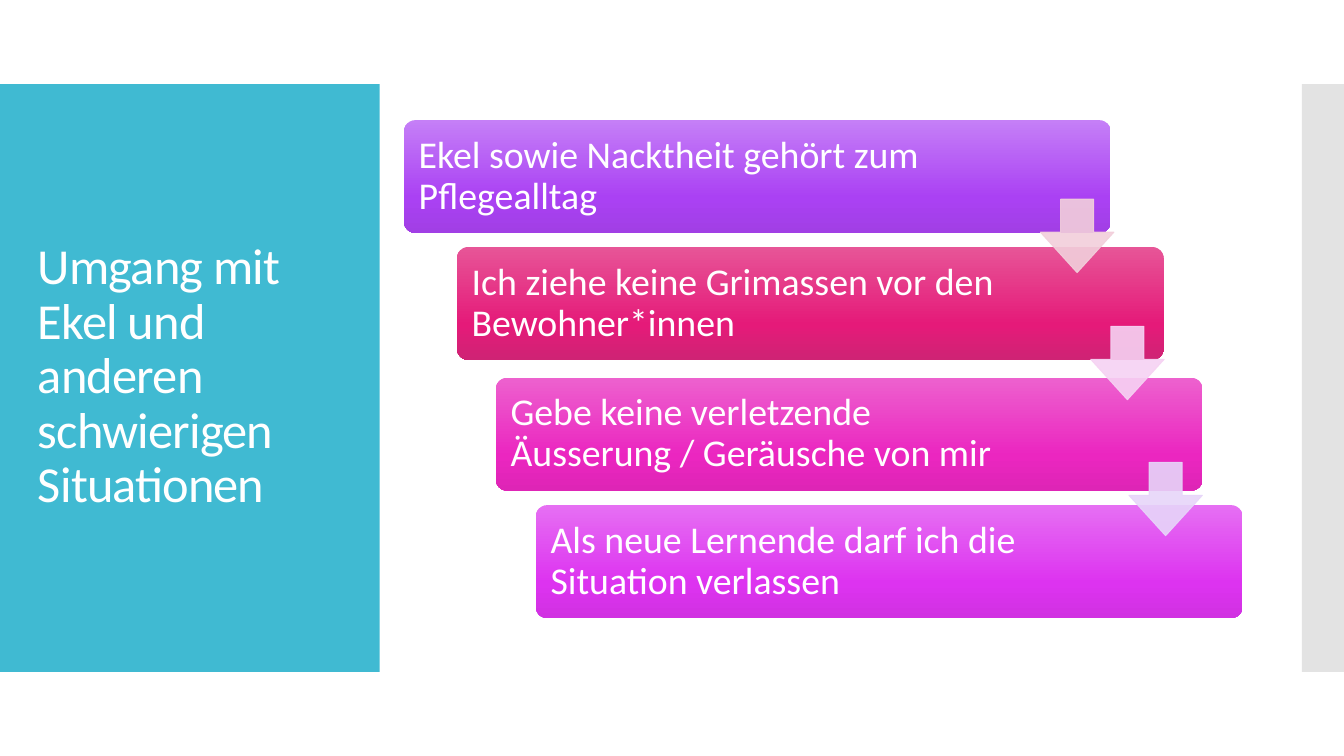
from copy import deepcopy

from lxml import etree
from pptx import Presentation
from pptx.dml.color import RGBColor
from pptx.enum import shapes, text
from pptx.oxml import ns
from pptx.util import Pt

WHITE = RGBColor(0xFF, 0xFF, 0xFF)
TEAL = RGBColor(0x40, 0xBA, 0xD2)
GREY = RGBColor(0xC8, 0xC8, 0xC8)
VIOLET = [RGBColor(0xC5, 0x7F, 0xF7), RGBColor(0xAA, 0x41, 0xF3), RGBColor(0xA1, 0x3F, 0xE5)]
RED = [RGBColor(0xE7, 0x55, 0x97), RGBColor(0xE5, 0x1A, 0x79), RGBColor(0xCF, 0x23, 0x74)]
PINK = [RGBColor(0xED, 0x61, 0xCE), RGBColor(0xEB, 0x26, 0xC0), RGBColor(0xDE, 0x25, 0xB6)]
MAGENTA = [RGBColor(0xE6, 0x6F, 0xF3), RGBColor(0xDD, 0x33, 0xF0), RGBColor(0xD1, 0x31, 0xE2)]
ROSE = RGBColor(0xF2, 0xCF, 0xDB)
PALE_PINK = RGBColor(0xF6, 0xD2, 0xF3)
LILAC = RGBColor(0xE7, 0xD5, 0xF9)

STOPS = (0, 0.69, 1)
PANEL_W, PANEL_H = 504.7, 80.6
ARROW_SIZE = 52.4
STEPS = [
    ("Ekel sowie Nacktheit gehört zum Pflegealltag", 288.6, 85.8, 405.4, VIOLET),
    ("Ich ziehe keine Grimassen vor den Bewohner*innen", 326.4, 176.4, 411.1, RED),
    ("Gebe keine verletzende Äusserung / Geräusche von mir", 354.2, 269.8, 405.4, PINK),
    ("Als neue Lernende darf ich die Situation verlassen", 382.8, 360.8, 406.1, MAGENTA),
]
ARROWS = [(743.2, 142.3, ROSE), (779.1, 233.1, PALE_PINK), (806.4, 330.2, LILAC)]


def add_preset(slide, preset, left, top, width, height, adjustments=()):
    """Add a preset shape without shadow or outline."""
    shape = slide.shapes.add_shape(preset, Pt(left), Pt(top), Pt(width), Pt(height))
    shape.shadow.inherit = False
    shape.line.fill.background()
    for index, value in enumerate(adjustments):
        shape.adjustments[index] = value
    return shape


def paint(fill, color):
    """Give a fill one solid colour."""
    fill.solid()
    fill.fore_color.rgb = color


def set_opacity(shape, percent):
    """Make every solid colour of a shape partly transparent."""
    for color in shape._element.spPr.iter(ns.qn("a:srgbClr")):
        etree.SubElement(color, ns.qn("a:alpha")).set("val", str(percent * 1000))


def add_text(slide, words, left, top, width, height, *, size, inset_x, inset_y, spacing=0):
    """Add a white, vertically centred text box that wraps."""
    box = slide.shapes.add_textbox(Pt(left), Pt(top), Pt(width), Pt(height))
    frame = box.text_frame
    frame.word_wrap = True
    frame.vertical_anchor = text.MSO_ANCHOR.MIDDLE
    frame.margin_left = frame.margin_right = Pt(inset_x)
    frame.margin_top = frame.margin_bottom = Pt(inset_y)
    paragraph = frame.paragraphs[0]
    paragraph.line_spacing = 0.9
    run = paragraph.add_run()
    run.text = words
    run.font.name = "Calibri"
    run.font.size = Pt(size)
    run.font.color.rgb = WHITE
    if spacing:
        run.font._element.set("spc", str(round(spacing * 100)))


def add_step(slide, words, left, top, text_width, colors):
    """Add a rounded panel with a vertical gradient and its text."""
    panel = add_preset(slide, shapes.MSO_SHAPE.ROUNDED_RECTANGLE,
                       left, top, PANEL_W, PANEL_H, [0.1])
    panel.fill.gradient()
    panel.fill.gradient_angle = 270
    stop_list = panel._element.spPr.find(".//" + ns.qn("a:gsLst"))
    stop_list.append(deepcopy(stop_list[-1]))
    for stop, position, color in zip(panel.fill.gradient_stops, STOPS, colors):
        stop.color.rgb = color
        stop.position = position
    add_text(slide, words, left + 2.4, top + 2.4, text_width, PANEL_H - 4.8,
             size=27, inset_x=8.1, inset_y=8.1)


def add_arrow(slide, left, top, color):
    """Add a translucent arrow leading to the next step."""
    arrow = add_preset(slide, shapes.MSO_SHAPE.DOWN_ARROW,
                       left, top, ARROW_SIZE, ARROW_SIZE, [0.45, 0.55])
    paint(arrow.fill, color)
    paint(arrow.line.fill, color)
    arrow.line.width = Pt(0.75)
    set_opacity(arrow, 90)


def main():
    """Build the slide and save it."""
    deck = Presentation()
    deck.slide_width, deck.slide_height = Pt(960), Pt(540)
    slide = deck.slides.add_slide(deck.slide_layouts[6])

    title_band = add_preset(slide, shapes.MSO_SHAPE.RECTANGLE, 0, 60, 271.2, 420)
    paint(title_band.fill, TEAL)
    edge_band = add_preset(slide, shapes.MSO_SHAPE.RECTANGLE, 930, 60, 30, 420)
    paint(edge_band.fill, GREY)
    set_opacity(edge_band, 50)
    add_text(slide, "Umgang mit Ekel und anderen schwierigen Situationen",
             20, 88.6, 231.8, 362.2, size=36, inset_x=7.2, inset_y=3.6, spacing=-0.6)

    for step in STEPS:
        add_step(slide, *step)
    for arrow in ARROWS:
        add_arrow(slide, *arrow)
    deck.save("out.pptx")


if __name__ == "__main__":
    main()
